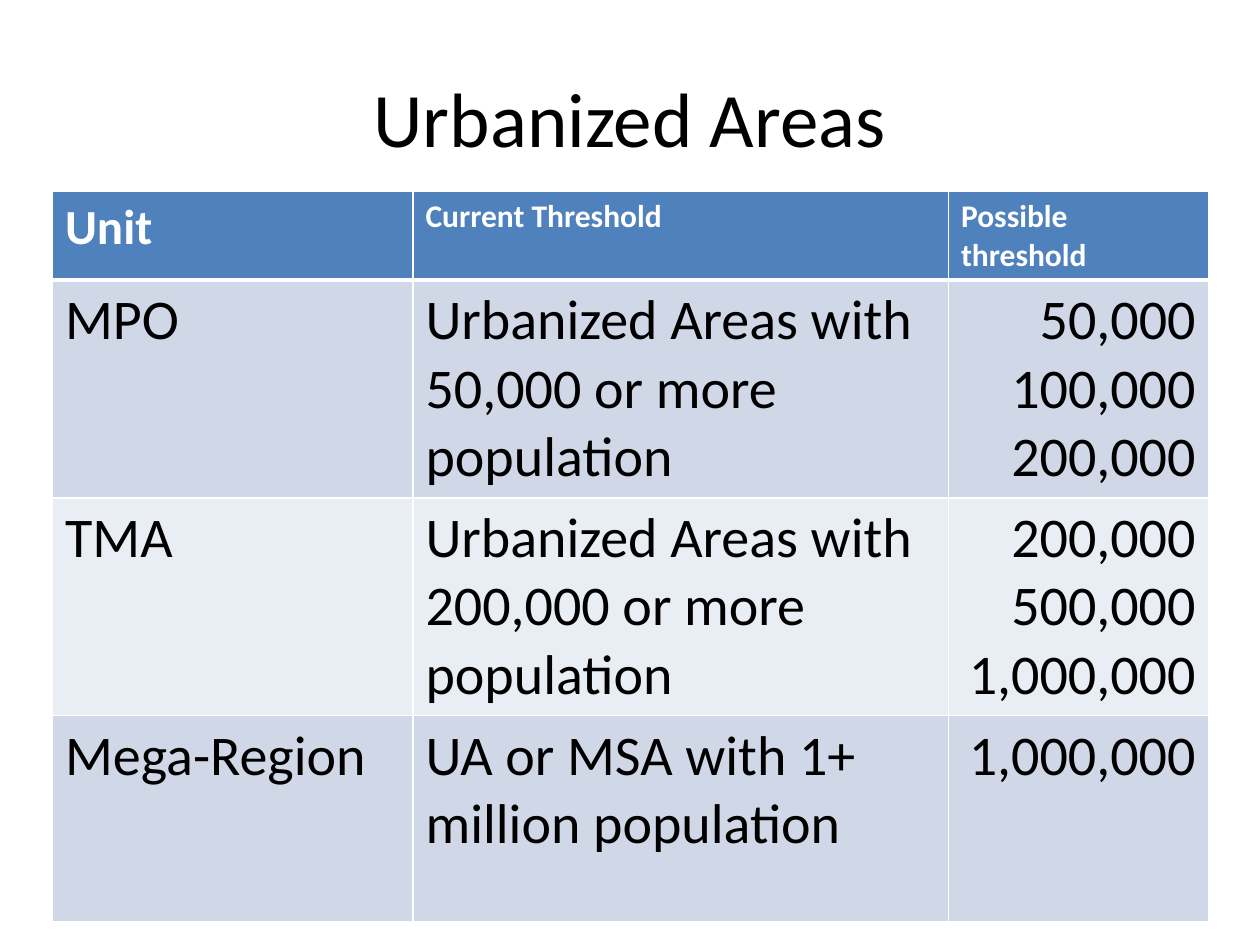
import pptx
import pptx.dml.color
import pptx.enum.text
import pptx.oxml
import pptx.oxml.ns
import pptx.util

Pt = pptx.util.Pt
RGBColor = pptx.dml.color.RGBColor
PP_ALIGN = pptx.enum.text.PP_ALIGN
MSO_ANCHOR = pptx.enum.text.MSO_ANCHOR

BLACK = RGBColor(0x00, 0x00, 0x00)
WHITE = RGBColor(0xFF, 0xFF, 0xFF)
HEADER_BLUE = RGBColor(0x4F, 0x81, 0xBD)
BAND_DARK = RGBColor(0xD0, 0xD8, 0xE8)
BAND_LIGHT = RGBColor(0xE9, 0xED, 0xF4)

FONT_NAME = "Calibri"
COLUMN_WIDTHS = (206, 306, 148.5)
ROW_HEIGHTS = (50.5, 124.5, 124.5, 118)
HEADERS = (("Unit", 28), ("Current Threshold", 18), ("Possible threshold", 18))
UNITS = (
    ("MPO", "Urbanized Areas with 50,000 or more population",
     ("50,000", "100,000", "200,000")),
    ("TMA", "Urbanized Areas with 200,000 or more population",
     ("200,000", "500,000", "1,000,000")),
    ("Mega-Region", "UA or MSA with 1+ million population",
     ("1,000,000",)),
)


def write_lines(text_frame, lines, size, color, bold=False, alignment=PP_ALIGN.LEFT):
    font_format = {"name": FONT_NAME, "size": Pt(size), "bold": bold}
    for index, line in enumerate(lines):
        paragraph = text_frame.paragraphs[0] if index == 0 else text_frame.add_paragraph()
        paragraph.alignment = alignment
        run = paragraph.add_run()
        run.text = line
        for name, value in font_format.items():
            setattr(run.font, name, value)
        run.font.color.rgb = color


def add_title(slide, text):
    shape = slide.shapes.add_textbox(Pt(36), Pt(21.6), Pt(648), Pt(90))
    frame_format = {"word_wrap": True, "vertical_anchor": MSO_ANCHOR.MIDDLE}
    for name, value in frame_format.items():
        setattr(shape.text_frame, name, value)
    write_lines(shape.text_frame, [text], 44, BLACK, alignment=PP_ALIGN.CENTER)


def set_borders(cell, widths):
    properties = cell._tc.get_or_add_tcPr()
    for side, width in widths.items():
        properties.append(pptx.oxml.parse_xml(
            f'<a:ln{side} {pptx.oxml.ns.nsdecls("a")} w="{Pt(width)}">'
            f'<a:solidFill><a:srgbClr val="{WHITE}"/></a:solidFill></a:ln{side}>'
        ))


def format_cell(cell, fill_color, top=1, bottom=1):
    set_borders(cell, {"L": 1, "R": 1, "T": top, "B": bottom})
    cell.fill.solid()
    cell.fill.fore_color.rgb = fill_color


def add_threshold_table(slide):
    shape = slide.shapes.add_table(
        len(ROW_HEIGHTS), len(COLUMN_WIDTHS), Pt(30), Pt(109.5),
        Pt(sum(COLUMN_WIDTHS)), Pt(sum(ROW_HEIGHTS)))
    table = shape.table
    for column, width in zip(table.columns, COLUMN_WIDTHS):
        column.width = Pt(width)
    for row, height in zip(table.rows, ROW_HEIGHTS):
        row.height = Pt(height)

    for cell, (text, size) in zip(table.rows[0].cells, HEADERS):
        format_cell(cell, HEADER_BLUE, bottom=3)
        write_lines(cell.text_frame, [text], size, WHITE, bold=True)

    for index, (unit, current, possible) in enumerate(UNITS, start=1):
        fill_color = BAND_DARK if index % 2 else BAND_LIGHT
        columns = (([unit], PP_ALIGN.LEFT), ([current], PP_ALIGN.LEFT),
                   (possible, PP_ALIGN.RIGHT))
        for cell, (lines, alignment) in zip(table.rows[index].cells, columns):
            format_cell(cell, fill_color, top=3 if index == 1 else 1)
            write_lines(cell.text_frame, lines, 32, BLACK, alignment=alignment)


def main():
    presentation = pptx.Presentation()
    presentation.slide_width = Pt(720)
    presentation.slide_height = Pt(540)
    slide = presentation.slides.add_slide(presentation.slide_layouts[6])
    add_title(slide, "Urbanized Areas")
    add_threshold_table(slide)
    presentation.save("out.pptx")


if __name__ == "__main__":
    main()
